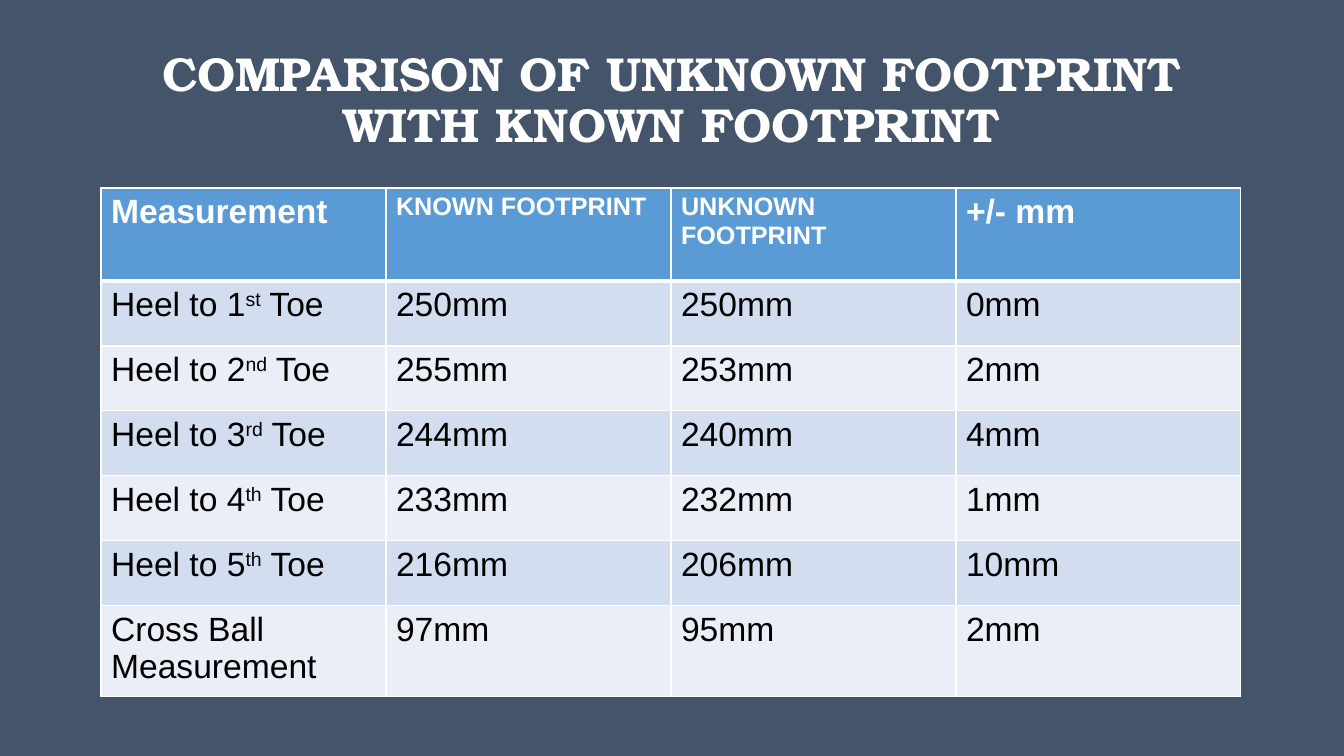
"""Build the footprint comparison slide."""
from dataclasses import dataclass

from lxml import etree
from pptx import Presentation
from pptx import util as u
from pptx.dml.color import RGBColor
from pptx.enum import text
from pptx.oxml.ns import qn

TITLE = "COMPARISON OF UNKNOWN FOOTPRINT WITH KNOWN FOOTPRINT"
HEADER = ["Measurement", "KNOWN FOOTPRINT", "UNKNOWN FOOTPRINT", "+/- mm"]
TOES = [
    ("1", "st", "250mm", "250mm", "0mm"),
    ("2", "nd", "255mm", "253mm", "2mm"),
    ("3", "rd", "244mm", "240mm", "4mm"),
    ("4", "th", "233mm", "232mm", "1mm"),
    ("5", "th", "216mm", "206mm", "10mm"),
]
CROSS_BALL = ["Cross Ball Measurement", "97mm", "95mm", "2mm"]

PAGE_SIZE = (1344, 756)
TITLE_BOX = (101, 31, 1141, 141)
TABLE_LEFT, TABLE_TOP = 101, 188
COLUMN_WIDTH = 285
ROW_HEIGHTS = [93] + [65] * len(TOES) + [86]


@dataclass(frozen=True)
class Theme:
    """Colours, fonts and type sizes."""
    ground: str = "44546A"
    light: str = "FFFFFF"
    dark: str = "000000"
    header: str = "5B9BD5"
    bands: tuple = ("D2DEEF", "EAEFF7")
    title_font: str = "TeX Gyre Bonum"
    table_font: str = "Arial"
    title_size: int = 34
    table_size: int = 24
    small_size: int = 18
    rule: int = 1
    header_rule: int = 3


THEME = Theme()


def px(length):
    """Turn pixels into EMU."""
    return u.Emu(round(length * 914400 / 100.8))


def add_span(para, words, font, size, colour, bold=False, raised=False):
    """Add one formatted run."""
    span = para.add_run()
    span.text = words
    span.font.name = font
    span.font.size = u.Pt(size)
    span.font.bold = bold
    span.font.color.rgb = RGBColor.from_string(colour)
    if raised:
        span._r.get_or_add_rPr().set("baseline", "30000")


def set_borders(cell, top, bottom):
    """Rule all four sides of a cell, widths in points."""
    properties = cell._tc.get_or_add_tcPr()
    widths = {"lnL": THEME.rule, "lnR": THEME.rule, "lnT": top, "lnB": bottom}
    for side, width in widths.items():
        line = etree.SubElement(properties, qn(f"a:{side}"), w=str(u.Pt(width)))
        fill = etree.SubElement(line, qn("a:solidFill"))
        etree.SubElement(fill, qn("a:srgbClr"), val=THEME.light)


def add_title(page):
    """Add the centred heading."""
    box = page.shapes.add_textbox(*map(px, TITLE_BOX))
    frame = box.text_frame
    frame.word_wrap = True
    frame.vertical_anchor = text.MSO_ANCHOR.MIDDLE
    para = frame.paragraphs[0]
    para.alignment = text.PP_ALIGN.CENTER
    para.line_spacing = 0.9
    add_span(para, TITLE, THEME.title_font, THEME.title_size, THEME.light, bold=True)


def add_measurements(page):
    """Add the banded table of measurements."""
    toe_rows = [[("Heel to " + number, ending, " Toe"), *values]
                for number, ending, *values in TOES]
    rows = [HEADER, *toe_rows, CROSS_BALL]
    table = page.shapes.add_table(
        len(rows), len(HEADER), px(TABLE_LEFT), px(TABLE_TOP),
        px(COLUMN_WIDTH * len(HEADER)), px(sum(ROW_HEIGHTS))).table
    for column in table.columns:
        column.width = px(COLUMN_WIDTH)
    for r, (height, row) in enumerate(zip(ROW_HEIGHTS, rows)):
        table.rows[r].height = px(height)
        is_header = r == 0
        fill = THEME.header if is_header else THEME.bands[(r - 1) % 2]
        colour = THEME.light if is_header else THEME.dark
        top = THEME.header_rule if r == 1 else THEME.rule
        bottom = THEME.header_rule if is_header else THEME.rule
        for c, content in enumerate(row):
            cell = table.cell(r, c)
            set_borders(cell, top, bottom)
            cell.fill.solid()
            cell.fill.fore_color.rgb = RGBColor.from_string(fill)
            small = is_header and c in (1, 2)
            size = THEME.small_size if small else THEME.table_size
            parts = content if isinstance(content, tuple) else (content,)
            for i, words in enumerate(parts):
                add_span(cell.text_frame.paragraphs[0], words, THEME.table_font,
                         size, colour, bold=is_header, raised=i == 1)


def main():
    """Build and save the deck."""
    deck = Presentation()
    deck.slide_width, deck.slide_height = map(px, PAGE_SIZE)
    page = deck.slides.add_slide(deck.slide_layouts[6])
    page.background.fill.solid()
    page.background.fill.fore_color.rgb = RGBColor.from_string(THEME.ground)
    add_title(page)
    add_measurements(page)
    deck.save("out.pptx")


if __name__ == "__main__":
    main()
